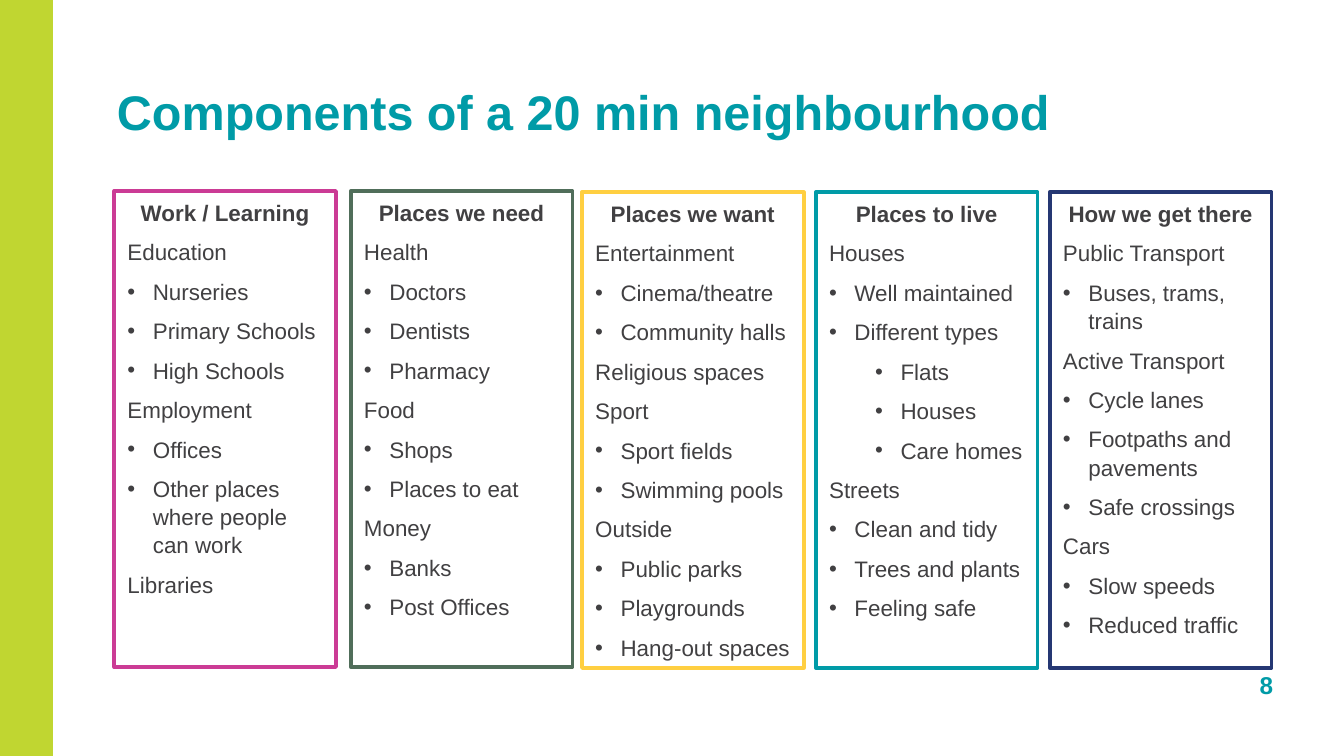
import pptx
import pptx.util
import pptx.dml.color
import pptx.enum.shapes
import pptx.enum.text
import pptx.oxml

Cm, Pt = pptx.util.Cm, pptx.util.Pt
RGB = pptx.dml.color.RGBColor.from_string
ALIGN = pptx.enum.text.PP_ALIGN
ANCHOR = pptx.enum.text.MSO_ANCHOR
FIT = pptx.enum.text.MSO_AUTO_SIZE
RECT = pptx.enum.shapes.MSO_SHAPE.RECTANGLE

COLORS = {
    "lime": "C0D631", "teal": "009BA7", "pink": "CB3B95", "green": "506E5A",
    "yellow": "FFCF41", "navy": "253773", "text": "414042", "white": "FFFFFF",
}

# Left and top in cm, border colour, heading, lines; * marks each bullet level
COLUMNS = [
    (2.16, 3.61, "pink", "Work / Learning", [
        "Education", "*Nurseries", "*Primary Schools", "*High Schools",
        "Employment", "*Offices", "*Other places where people can work",
        "Libraries"]),
    (6.63, 3.61, "green", "Places we need", [
        "Health", "*Doctors", "*Dentists", "*Pharmacy",
        "Food", "*Shops", "*Places to eat",
        "Money", "*Banks", "*Post Offices"]),
    (11, 3.63, "yellow", "Places we want", [
        "Entertainment", "*Cinema/theatre", "*Community halls",
        "Religious spaces", "Sport", "*Sport fields", "*Swimming pools",
        "Outside", "*Public parks", "*Playgrounds", "*Hang-out spaces"]),
    (15.42, 3.63, "teal", "Places to live", [
        "Houses", "*Well maintained", "*Different types",
        "**Flats", "**Houses", "**Care homes",
        "Streets", "*Clean and tidy", "*Trees and plants", "*Feeling safe"]),
    (19.84, 3.63, "navy", "How we get there", [
        "Public Transport", "*Buses, trams, trains",
        "Active Transport", "*Cycle lanes", "*Footpaths and pavements",
        "*Safe crossings", "Cars", "*Slow speeds", "*Reduced traffic"]),
]
INDENT = {1: 0.48, 2: 1.35}


def style(para, size, color, bold=False):
    for run in para.runs:
        run.font.name = "Arial"
        run.font.size = Pt(size)
        run.font.bold = bold
        run.font.color.rgb = RGB(COLORS[color])


def bullet(para, level):
    para.level = level - 1
    props = para._p.get_or_add_pPr()
    props.set("marL", str(Cm(INDENT[level])))
    props.set("indent", str(-Cm(INDENT[1])))
    for tag, key, value in (("buFont", "typeface", "Arial"), ("buChar", "char", "•")):
        mark = pptx.oxml.parse_xml(
            f'<a:{tag} xmlns:a="http://schemas.openxmlformats.org/drawingml/2006/main"'
            f' {key}="{value}"/>')
        props.append(mark)


deck = pptx.Presentation()
deck.slide_width, deck.slide_height = Cm(25.4), Cm(14.28)
slide = deck.slides.add_slide(deck.slide_layouts[5])
shapes = slide.shapes

# Side bar
bar = shapes.add_shape(RECT, 0, 0, Cm(1), deck.slide_height)
bar.shadow.inherit = False
bar.fill.solid()
bar.fill.fore_color.rgb = RGB(COLORS["lime"])
bar.line.fill.background()

# Title
title = shapes.title
title.left, title.top, title.width, title.height = Cm(2.21), Cm(1.55), Cm(19.1), Cm(1.09)
frame = title.text_frame
frame.text = "Components of a 20 min neighbourhood"
frame.margin_left = frame.margin_right = frame.margin_top = frame.margin_bottom = 0
frame.vertical_anchor = ANCHOR.BOTTOM
frame.auto_size = FIT.NONE
frame.paragraphs[0].alignment = ALIGN.LEFT
style(frame.paragraphs[0], 26, "teal", bold=True)

# Slide number
number = shapes.add_textbox(Cm(22.3), Cm(12.52), Cm(2.01), Cm(0.81))
frame = number.text_frame
frame.text = "8"
frame.word_wrap = True
frame.vertical_anchor = ANCHOR.BOTTOM
frame.paragraphs[0].alignment = ALIGN.RIGHT
style(frame.paragraphs[0], 13, "teal", bold=True)

# Columns
for left, top, color, head, lines in COLUMNS:
    box = shapes.add_shape(RECT, Cm(left), Cm(top), Cm(4.19), Cm(8.99))
    box.shadow.inherit = False
    box.fill.solid()
    box.fill.fore_color.rgb = RGB(COLORS["white"])
    box.line.color.rgb = RGB(COLORS[color])
    box.line.width = Pt(2)
    frame = box.text_frame
    frame.word_wrap = True
    frame.vertical_anchor = ANCHOR.TOP
    frame.text = "\n".join([head] + [line.lstrip("*") for line in lines])
    for para, line in zip(frame.paragraphs, [head] + lines):
        first = line == head
        para.alignment = ALIGN.CENTER if first else ALIGN.LEFT
        para.line_spacing = 1.05
        para.space_after = Pt(6)
        level = line.count("*")
        if level:
            bullet(para, level)
        style(para, 12, "text", bold=first)

deck.save("out.pptx")
